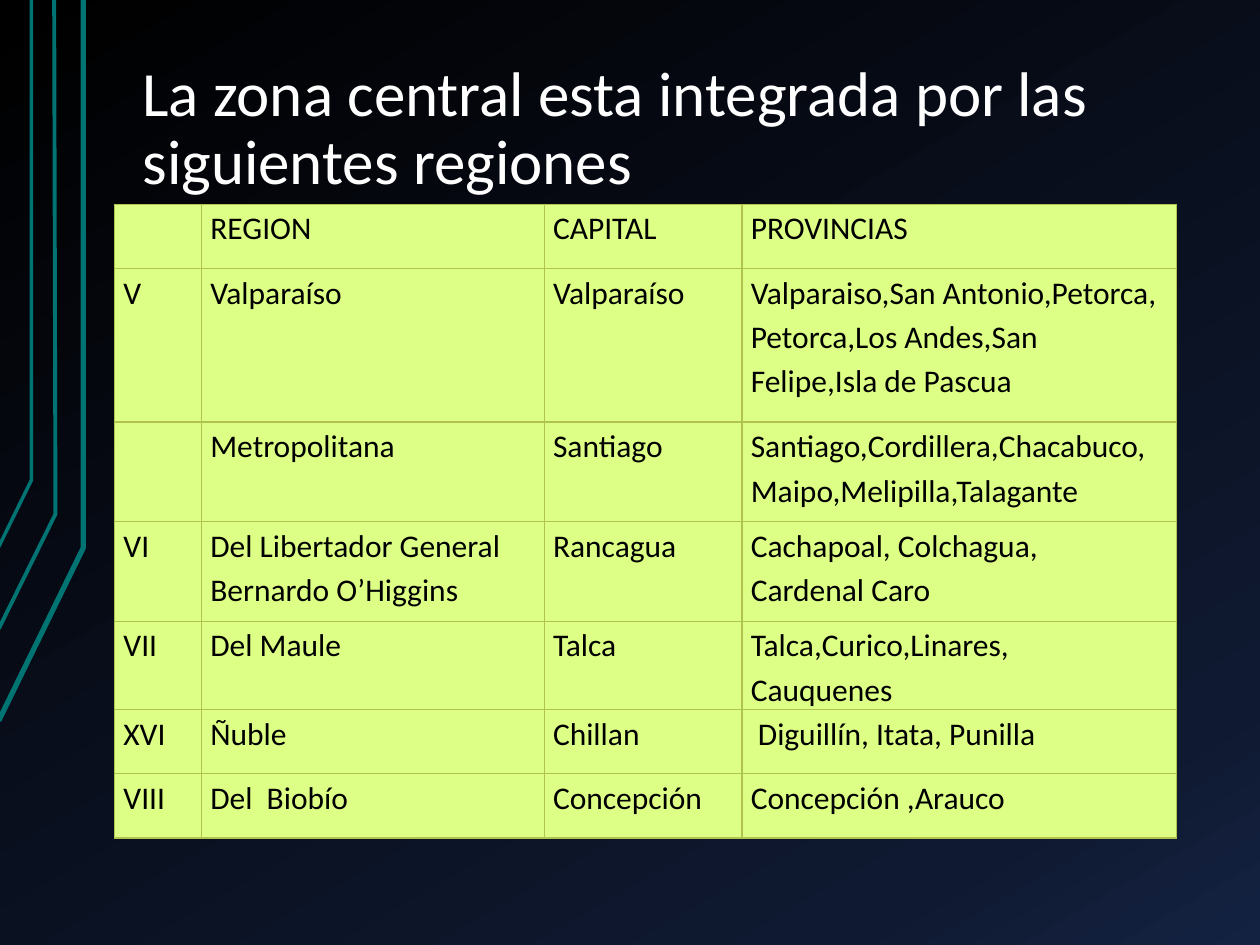
from copy import deepcopy

from pptx import Presentation
from pptx.dml.color import RGBColor
from pptx.enum.text import MSO_ANCHOR, MSO_AUTO_SIZE, PP_ALIGN
from pptx.oxml import parse_xml
from pptx.oxml.ns import nsdecls, qn
from pptx.util import Inches, Pt

COLORS = {
    "night": "000000",
    "navy": "0F1931",
    "blue": "142242",
    "teal": "007373",
    "white": "FFFFFF",
    "black": "000000",
    "lime": "DDFF85",
    "border": "AFC34D",
}
GRADIENT = [(0, "night"), (0.85, "navy"), (1, "blue")]
ACCENT_LINES = [
    ([(-0.01, 5.72), (0.66, 4.35), (0.66, 0)], 3),
    ([(-0.01, 4.99), (0.44, 4.08), (0.43, 0)], 2.25),
    ([(-0.01, 4.34), (0.25, 3.81), (0.25, 0)], 2),
]
TITLE = "La zona central esta integrada por las siguientes regiones"
TITLE_FRAME = {
    "margin_left": Inches(0.13),
    "margin_right": Inches(0.13),
    "margin_top": Inches(0.07),
    "margin_bottom": Inches(0.07),
    "vertical_anchor": MSO_ANCHOR.BOTTOM,
    "word_wrap": True,
    "auto_size": MSO_AUTO_SIZE.NONE,
}
CELL_FORMAT = {
    "margin_left": Inches(0.07),
    "margin_right": Inches(0.07),
    "margin_top": 0,
    "margin_bottom": 0,
    "vertical_anchor": MSO_ANCHOR.TOP,
}
COLUMN_WIDTHS = [0.69, 2.72, 1.57, 3.45]
ROW_HEIGHTS = [0.51, 1.22, 0.79, 0.79, 0.51, 0.51, 0.51]
REGIONS = [
    ["", "REGION", "CAPITAL", "PROVINCIAS"],
    ["V", "Valparaíso", "Valparaíso",
     "Valparaiso,San Antonio,Petorca,\nPetorca,Los Andes,San Felipe,Isla de Pascua"],
    ["", "Metropolitana", "Santiago",
     "Santiago,Cordillera,Chacabuco,\nMaipo,Melipilla,Talagante"],
    ["VI", "Del Libertador General\nBernardo O’Higgins", "Rancagua",
     "Cachapoal, Colchagua,\nCardenal Caro"],
    ["VII", "Del Maule", "Talca", "Talca,Curico,Linares,\nCauquenes"],
    ["XVI", "Ñuble", "Chillan", " Diguillín, Itata, Punilla"],
    ["VIII", "Del  Biobío", "Concepción", "Concepción ,Arauco"],
]


def color(name):
    return RGBColor.from_string(COLORS[name])


def apply_format(target, values):
    for name, value in values.items():
        setattr(target, name, value)


def format_text(text_frame, size, color_name, spacing):
    for paragraph in text_frame.paragraphs:
        apply_format(paragraph, {
            "alignment": PP_ALIGN.LEFT,
            "line_spacing": spacing,
            "space_before": Pt(0),
            "space_after": Pt(0),
        })
        apply_format(paragraph.font, {"name": "Calibri", "size": Pt(size)})
        for run in paragraph.runs:
            apply_format(run.font, {"name": "Calibri", "size": Pt(size)})
            run.font.color.rgb = color(color_name)


def set_background(slide):
    fill = slide.background.fill
    fill.gradient()
    fill.gradient_angle = 300
    stop_list = slide.element.find(".//" + qn("a:gsLst"))
    stop_list.append(deepcopy(stop_list[-1]))
    for stop, (position, name) in zip(fill.gradient_stops, GRADIENT):
        stop.position = position
        stop.color.rgb = color(name)


def add_accent_line(slide, points, width):
    start, *rest = [(Inches(x), Inches(y)) for x, y in points]
    builder = slide.shapes.build_freeform(*start)
    builder.add_line_segments(rest, close=False)
    shape = builder.convert_to_shape()
    shape.shadow.inherit = False
    shape.fill.background()
    shape.line.color.rgb = color("teal")
    shape.line.width = Pt(width)


def set_title(slide):
    title = slide.shapes.title
    apply_format(title, {
        "left": Inches(1),
        "top": Inches(0.3),
        "width": Inches(8.5),
        "height": Inches(1.34),
    })
    title.text_frame.text = TITLE
    apply_format(title.text_frame, TITLE_FRAME)
    format_text(title.text_frame, 36, "white", 0.9)


def set_borders(cell):
    properties = cell._tc.get_or_add_tcPr()
    for side in ("lnL", "lnR", "lnT", "lnB"):
        properties.append(parse_xml(
            f'<a:{side} {nsdecls("a")} w="{Pt(0.75)}"><a:solidFill>'
            f'<a:srgbClr val="{COLORS["border"]}"/></a:solidFill></a:{side}>'
        ))


def fill_cell(cell, text):
    cell.text = text
    apply_format(cell, CELL_FORMAT)
    set_borders(cell)
    cell.fill.solid()
    cell.fill.fore_color.rgb = color("lime")
    format_text(cell.text_frame, 18, "black", 1.15)


def add_region_table(slide):
    table = slide.shapes.add_table(
        len(REGIONS), len(COLUMN_WIDTHS), Inches(0.91), Inches(1.62),
        Inches(sum(COLUMN_WIDTHS)), Inches(sum(ROW_HEIGHTS)),
    ).table
    apply_format(table, {"first_row": False, "horz_banding": False})
    for column, width in zip(table.columns, COLUMN_WIDTHS):
        column.width = Inches(width)
    for row, height, texts in zip(table.rows, ROW_HEIGHTS, REGIONS):
        row.height = Inches(height)
        for cell, text in zip(row.cells, texts):
            fill_cell(cell, text)


def main():
    presentation = Presentation()
    apply_format(presentation, {"slide_width": Inches(10), "slide_height": Inches(7.5)})
    slide = presentation.slides.add_slide(presentation.slide_layouts[5])
    set_background(slide)
    for points, width in ACCENT_LINES:
        add_accent_line(slide, points, width)
    set_title(slide)
    add_region_table(slide)
    presentation.save("out.pptx")


if __name__ == "__main__":
    main()
